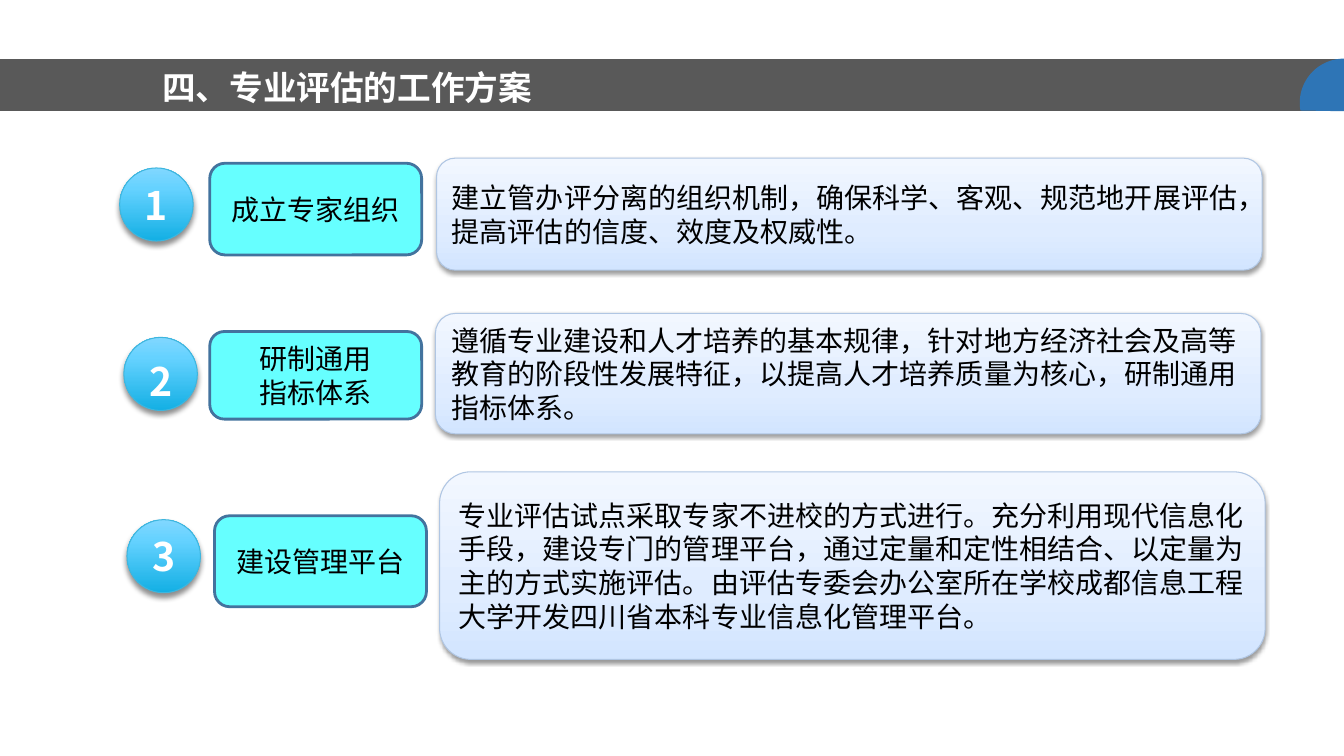
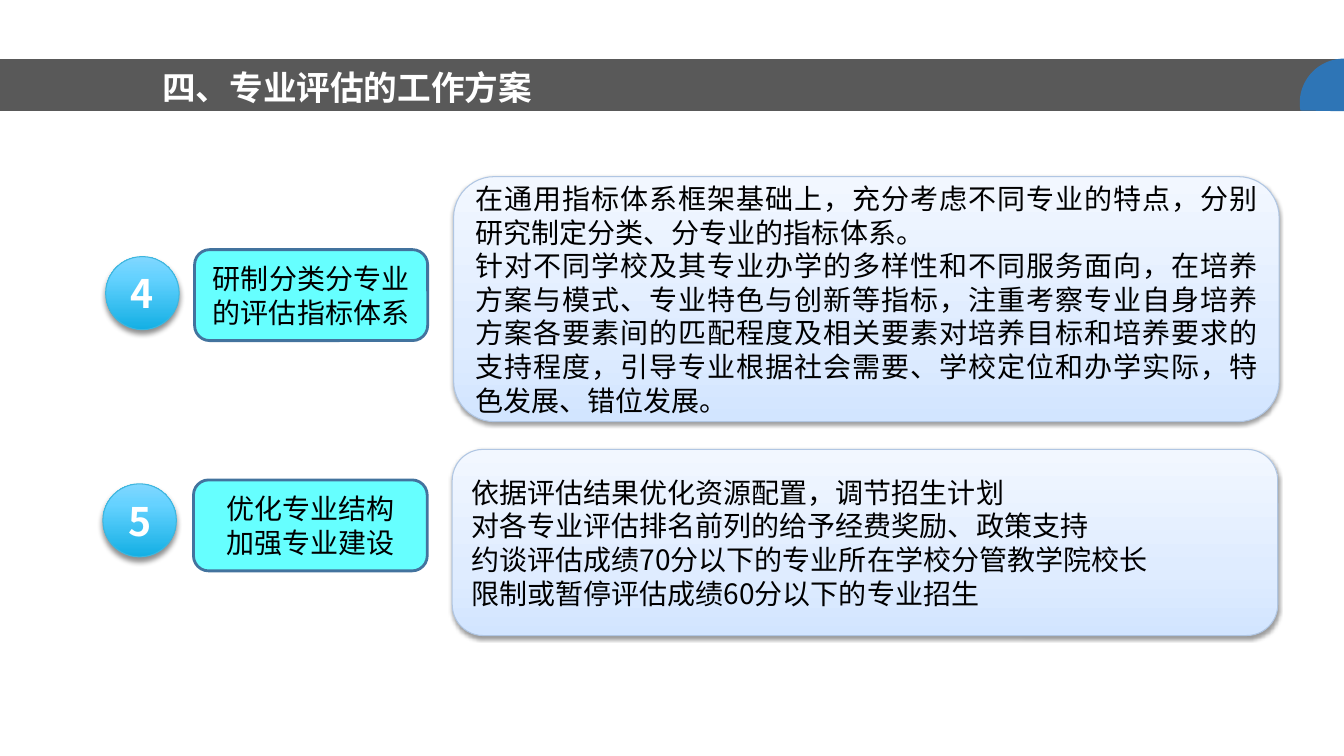
import dataclasses
import math

import lxml.etree
import pptx
import pptx.dml.color
import pptx.enum.lang
import pptx.enum.shapes
import pptx.enum.text
import pptx.oxml.ns
import pptx.util

Pt = pptx.util.Pt
SHAPE = pptx.enum.shapes.MSO_SHAPE
ALIGN = pptx.enum.text.PP_ALIGN
ANCHOR = pptx.enum.text.MSO_ANCHOR
CHINESE = pptx.enum.lang.MSO_LANGUAGE_ID.SIMPLIFIED_CHINESE
qn = pptx.oxml.ns.qn


@dataclasses.dataclass(frozen=True)
class Theme:
    font: str = "Noto Sans CJK SC"
    title_font: str = "Arial"
    title_size: int = 24
    body_size: int = 20
    badge_size: int = 28
    body_spacing: int = 24
    white: str = "FFFFFF"
    black: str = "000000"
    band: str = "595959"
    corner: str = "2E75B6"
    label: str = "66FFFF"
    label_line: str = "43739E"
    card_line: str = "B0C6E3"
    badge_line: str = "3EB6DE"
    card_stops: tuple = ((0, "D2E5FF"), (35, "DFECFF"), (100, "F2F7FF"))
    badge_stops: tuple = ((0, "13AFE4"), (72, "65D2FF"), (100, "81D7FF"))
    card_shadow: tuple = (38, 3.1, 1.6)
    badge_shadow: tuple = (43, 4, 3)


def rgb(value):
    return pptx.dml.color.RGBColor.from_string(value)


def set_values(target, values):
    for name, value in values.items():
        setattr(target, name, value)


class Deck:
    width, height = 960, 540
    band_top, band_height = 42.3, 37.2

    def __init__(self, theme):
        self.theme = theme
        self.file = pptx.Presentation()
        set_values(self.file, {"slide_width": Pt(self.width), "slide_height": Pt(self.height)})
        self.page = None

    def add_page(self, title):
        self.page = self.file.slides.add_slide(self.file.slide_layouts[5])
        box = self.page.shapes.title
        band = self.shape(SHAPE.FLOWCHART_PROCESS, (0, self.band_top, self.width, self.band_height))
        self.paint(band, self.theme.band)
        box.element.addprevious(band.element)
        places = ("left", "top", "width", "height")
        set_values(box, dict(zip(places, map(Pt, (108.7, 44, 396, 36)))))
        self.fill_text(box, [title], self.theme.title_size, self.theme.white,
                       ALIGN.LEFT, self.theme.title_font, True, margin_y=0)
        self.corner()

    def corner(self):
        radius, middle = 31.6, 73.5
        bottom = self.band_top + self.band_height
        arc = [(Pt(self.width + radius * math.cos(math.radians(angle))),
                Pt(middle + radius * math.sin(math.radians(angle))))
               for angle in range(170, 271, 5)]
        outline = self.page.shapes.build_freeform(*arc[0], scale=1.0)
        outline.add_line_segments(arc[1:] + [(Pt(self.width), Pt(bottom))])
        shape = outline.convert_to_shape()
        shape.shadow.inherit = False
        self.paint(shape, self.theme.corner)

    def shape(self, kind, place):
        shape = self.page.shapes.add_shape(kind, *map(Pt, place))
        shape.shadow.inherit = False
        return shape

    def paint(self, shape, fill, line=None, line_width=0.75):
        if isinstance(fill, str):
            shape.fill.solid()
            shape.fill.fore_color.rgb = rgb(fill)
        else:
            self.gradient(shape, fill)
        if line is None:
            shape.line.fill.background()
        else:
            shape.line.color.rgb = rgb(line)
            shape.line.width = Pt(line_width)

    def gradient(self, shape, stops):
        shape.fill.gradient()
        shape.fill.gradient_angle = 90
        stop_list = shape.element.spPr.find(".//" + qn("a:gsLst"))
        for old_stop in list(stop_list):
            stop_list.remove(old_stop)
        for position, colour in stops:
            stop = lxml.etree.SubElement(stop_list, qn("a:gs"), pos=str(position * 1000))
            lxml.etree.SubElement(stop, qn("a:srgbClr"), val=colour)

    def cast_shadow(self, shape, shadow):
        opacity, blur, distance = shadow
        effects = shape.element.spPr.find(qn("a:effectLst"))
        outer = lxml.etree.SubElement(
            effects, qn("a:outerShdw"), blurRad=str(Pt(blur)), dist=str(Pt(distance)),
            dir="5400000", rotWithShape="0")
        colour = lxml.etree.SubElement(outer, qn("a:srgbClr"), val=self.theme.black)
        lxml.etree.SubElement(colour, qn("a:alpha"), val=str(opacity * 1000))

    def fill_text(self, box, lines, size, colour, align, font=None, bold=False,
                  spacing=None, margin_x=7.2, margin_y=3.6):
        frame = box.text_frame
        set_values(frame, {
            "word_wrap": True, "auto_size": pptx.enum.text.MSO_AUTO_SIZE.NONE,
            "vertical_anchor": ANCHOR.MIDDLE,
            "margin_left": Pt(margin_x), "margin_right": Pt(margin_x),
            "margin_top": Pt(margin_y), "margin_bottom": Pt(margin_y)})
        for index, line in enumerate(lines):
            para = frame.add_paragraph() if index else frame.paragraphs[0]
            set_values(para, {"alignment": align, "line_spacing": spacing,
                              "space_before": Pt(0), "space_after": Pt(0)})
            span = para.add_run()
            span.text = line
            set_values(span.font, {"name": font or self.theme.font, "size": Pt(size),
                                   "bold": bold, "language_id": CHINESE})
            span.font.color.rgb = rgb(colour)
        for latin in list(box.element.iter(qn("a:latin"))):
            latin.addnext(latin.makeelement(qn("a:ea"), {"typeface": self.theme.font}))

    def card(self, place, lines, align=ALIGN.LEFT):
        box = self.shape(SHAPE.ROUNDED_RECTANGLE, place)
        self.paint(box, self.theme.card_stops, self.theme.card_line)
        self.cast_shadow(box, self.theme.card_shadow)
        self.fill_text(box, lines, self.theme.body_size, self.theme.black, align,
                       spacing=Pt(self.theme.body_spacing))

    def label(self, place, lines):
        box = self.shape(SHAPE.ROUNDED_RECTANGLE, place)
        self.paint(box, self.theme.label, self.theme.label_line, 2)
        self.fill_text(box, lines, self.theme.body_size, self.theme.black, ALIGN.CENTER,
                       spacing=Pt(self.theme.body_spacing))

    def badge(self, left, top, number, spacing=None):
        box = self.shape(SHAPE.OVAL, (left, top, 52.5, 52.2))
        self.paint(box, self.theme.badge_stops, self.theme.badge_line)
        self.cast_shadow(box, self.theme.badge_shadow)
        self.fill_text(box, [str(number)], self.theme.badge_size, self.theme.white,
                       ALIGN.CENTER, bold=True, spacing=spacing, margin_x=0, margin_y=0)


TITLE = "四、专业评估的工作方案"
CARD_WIDTH = 589.7
PAGES = [
    [
        {"badge": (85.5, 120, 1),
         "label": ((149.8, 116.6, 151.4, 65.5), ["成立专家组织"]),
         "card": ((311.8, 113, CARD_WIDTH, 80), [
             "建立管办评分离的组织机制，确保科学、客观、规范地开展评估，提高评估的信度、效度及权威性。"])},
        {"badge": (88.5, 241, 2, 1.3),
         "label": ((149.8, 236.8, 151.4, 62.6), ["研制通用", "指标体系"]),
         "card": ((311, 223.9, CARD_WIDTH, 86), [
             "遵循专业建设和人才培养的基本规律，针对地方经济社会及高等教育的阶段性发展特征，"
             "以提高人才培养质量为核心，研制通用指标体系。"])},
        {"badge": (90.7, 371.2, 3),
         "label": ((153.2, 368.4, 151.4, 65), ["建设管理平台"]),
         "card": ((314, 337, CARD_WIDTH, 134), [
             "专业评估试点采取专家不进校的方式进行。充分利用现代信息化手段，建设专门的管理平台，"
             "通过定量和定性相结合、以定量为主的方式实施评估。由评估专委会办公室所在学校"
             "成都信息工程大学开发四川省本科专业信息化管理平台。"])},
    ],
    [
        {"badge": (75.5, 183.3, 4),
         "label": ((139, 178.3, 166.5, 65), ["研制分类分专业的评估指标体系"]),
         "card": ((324, 126.2, CARD_WIDTH, 175), [
             "在通用指标体系框架基础上，充分考虑不同专业的特点，分别研究制定分类、分专业的指标体系。",
             "针对不同学校及其专业办学的多样性和不同服务面向，在培养方案与模式、专业特色与创新等指标，"
             "注重考察专业自身培养方案各要素间的匹配程度及相关要素对培养目标和培养要求的支持程度，"
             "引导专业根据社会需要、学校定位和办学实际，特色发展、错位发展。"], ALIGN.JUSTIFY)},
        {"badge": (73.5, 345.6, 5),
         "label": ((138.2, 342.8, 167, 65), ["优化专业结构", "加强专业建设"]),
         "card": ((323, 321, CARD_WIDTH, 133), [
             "依据评估结果优化资源配置，调节招生计划",
             "对各专业评估排名前列的给予经费奖励、政策支持",
             "约谈评估成绩70分以下的专业所在学校分管教学院校长",
             "限制或暂停评估成绩60分以下的专业招生"], ALIGN.JUSTIFY)},
    ],
]


def main():
    deck = Deck(Theme())
    for steps in PAGES:
        deck.add_page(TITLE)
        for step in steps:
            deck.card(*step["card"])
            deck.badge(*step["badge"])
            deck.label(*step["label"])
    deck.file.save("out.pptx")


if __name__ == "__main__":
    main()
